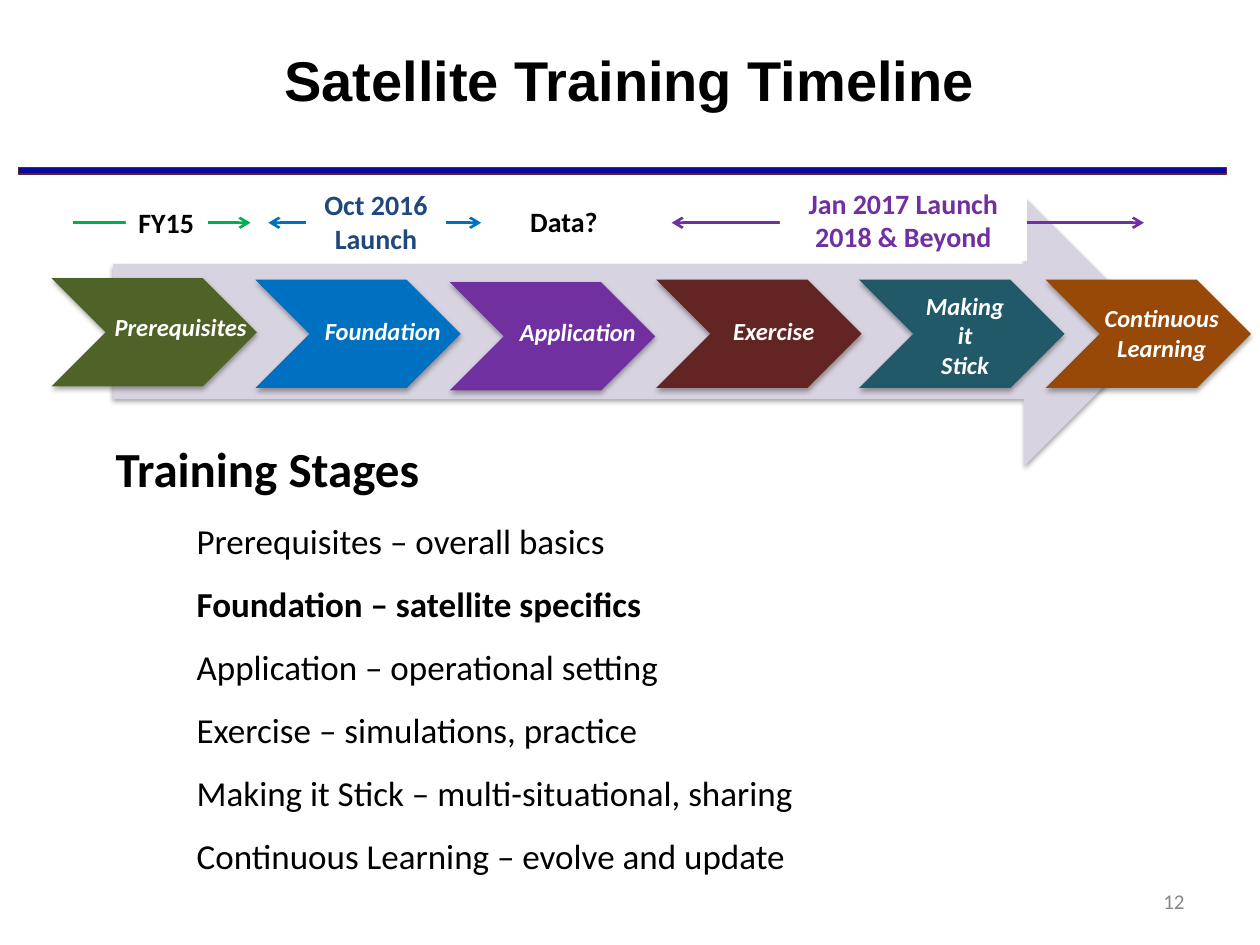
from lxml import etree
from pptx import Presentation
from pptx import util as u
from pptx.dml.color import RGBColor
from pptx.enum import shapes, text
from pptx.oxml import ns

BLACK = RGBColor(0x00, 0x00, 0x00)
WHITE = RGBColor(0xFF, 0xFF, 0xFF)
GREY = RGBColor(0x88, 0x88, 0x88)
NAVY = RGBColor(0x0A, 0x0A, 0x9E)
MAROON = RGBColor(0x63, 0x24, 0x23)
LAVENDER = RGBColor(0xD8, 0xD3, 0xE0)
OLIVE = RGBColor(0x4F, 0x62, 0x28)
BLUE = RGBColor(0x00, 0x70, 0xC0)
PURPLE = RGBColor(0x70, 0x30, 0xA0)
BRICK = RGBColor(0x63, 0x25, 0x23)
TEAL = RGBColor(0x21, 0x59, 0x68)
ORANGE = RGBColor(0x98, 0x48, 0x07)
GREEN = RGBColor(0x00, 0xB0, 0x50)
INK_BLUE = RGBColor(0x1F, 0x49, 0x7D)

LEFT, CENTER, RIGHT = text.PP_ALIGN.LEFT, text.PP_ALIGN.CENTER, text.PP_ALIGN.RIGHT
CHEVRON_SIZE = (4.14, 2.18)

STAGES = [
    ("Prerequisites", OLIVE, (0, 1.98), (1.02, 0.56, 3.25, 0.86), LEFT, True),
    ("Foundation", BLUE, (4.11, 2.01), (1.15, 0.61, 3.25, 0.86), LEFT, True),
    ("Application", PURPLE, (8.03, 2.06), (1.16, 0.58, 2.9, 0.86), LEFT, False),
    ("Exercise", BRICK, (12.19, 2.01), (1.3, 0.61, 2.41, 0.86), LEFT, True),
    ("Making it\nStick", TEAL, (16.28, 2.01), (0.94, 0.1, 2.39, 2.06), CENTER, True),
    ("Continuous Learning", ORANGE, (20.04, 2.01), (0.84, 0.35, 3, 1.45), CENTER, True),
]

PERIODS = [
    ("FY15", BLACK, GREEN, (0.43, 4.01), ["tailEnd"], (1.5, 0.38, 1.65, 0.94), LEFT, False),
    ("Oct 2016\nLaunch", INK_BLUE, BLUE, (4.37, 8.66), ["headEnd", "tailEnd"],
     (5.13, 0.03, 2.82, 1.63), CENTER, True),
    ("Jan 2017 Launch 2018 & Beyond", PURPLE, PURPLE, (12.5, 22.02), ["headEnd", "tailEnd"],
     (14.68, 0, 4.98, 1.63), CENTER, True),
]

STAGE_NOTES = [
    "Prerequisites – overall basics",
    "Foundation – satellite specifics",
    "Application – operational setting",
    "Exercise – simulations, practice",
    "Making it Stick – multi-situational, sharing",
    "Continuous Learning – evolve and update",
]
CURRENT_STAGE = STAGE_NOTES[1]


def in_cm(*lengths):
    return [u.Cm(length) for length in lengths]


def style(paragraph, size, color, bold=False, italic=False, align=LEFT, face="Calibri"):
    paragraph.alignment = align
    for run in paragraph.runs:
        font = run.font
        font.name, font.size = face, u.Pt(size)
        font.bold, font.italic = bold, italic
        font.color.rgb = color


def add_label(slide, box, words, size, color, wrap=True, fill=None, **look):
    label = slide.shapes.add_textbox(*in_cm(*box))
    if fill is not None:
        label.fill.solid()
        label.fill.fore_color.rgb = fill
    label.text_frame.word_wrap = wrap
    label.text_frame.text = words
    for paragraph in label.text_frame.paragraphs:
        style(paragraph, size, color, **look)
    return label


def add_block(slide, preset, box, fill, shaded=False):
    block = slide.shapes.add_shape(preset, *in_cm(*box))
    block.shadow.inherit = False
    block.fill.solid()
    block.fill.fore_color.rgb = fill
    block.line.fill.background()
    if shaded:
        effects = block.element.spPr.find(ns.qn("a:effectLst"))
        shade = etree.SubElement(effects, ns.qn("a:outerShdw"), blurRad=str(u.Pt(3.1)),
                                 dist=str(u.Pt(1.8)), dir="5400000", rotWithShape="0")
        tint = etree.SubElement(shade, ns.qn("a:srgbClr"), val="000000")
        etree.SubElement(tint, ns.qn("a:alpha"), val="35000")
    return block


def add_span(slide, start, end, y, color, heads):
    span = slide.shapes.add_connector(shapes.MSO_CONNECTOR.STRAIGHT, *in_cm(start, y, end, y))
    span.line.color.rgb = color
    span.line.width = u.Pt(1.5)
    outline = span.line._get_or_add_ln()
    for head in heads:
        etree.SubElement(outline, ns.qn(f"a:{head}"), type="arrow")
    etree.SubElement(span.element.spPr, ns.qn("a:effectLst"))


def place(placeholder, box):
    placeholder.left, placeholder.top, placeholder.width, placeholder.height = in_cm(*box)
    placeholder.text_frame.auto_size = text.MSO_AUTO_SIZE.NONE
    placeholder.text_frame.word_wrap = True


def heading(slide, left, top, width, height):
    title = slide.shapes.title
    place(title, (left + 1.52, top, width - 2.75, height))
    title.text_frame.vertical_anchor = text.MSO_ANCHOR.MIDDLE
    title.text_frame.margin_top = title.text_frame.margin_bottom = u.Cm(0.25)
    title.text_frame.text = "Satellite Training Timeline"
    style(title.text_frame.paragraphs[0], 32, BLACK, bold=True, align=CENTER, face="Arial")
    rule = add_block(slide, shapes.MSO_SHAPE.RECTANGLE,
                     (left, top + height + 0.2, width, 0.13), NAVY)
    rule.line.color.rgb = MAROON
    rule.line.width = u.Pt(0.75)


def timeline(slide, left, top):
    add_block(slide, shapes.MSO_SHAPE.RIGHT_ARROW,
              (left + 1.24, top + 0.33, 21.08, 5.44), LAVENDER, shaded=True)
    for words, fill, (x, y), (dx, dy, width, height), align, wrap in STAGES:
        x, y = left + x, top + y
        add_block(slide, shapes.MSO_SHAPE.CHEVRON, (x, y, *CHEVRON_SIZE), fill, shaded=True)
        add_label(slide, (x + dx, y + dy, width, height), words, 14, WHITE,
                  wrap=wrap, bold=True, italic=True, align=align)
    for words, color, stroke, (start, end), heads, (x, y, width, height), align, wrap in PERIODS:
        add_span(slide, left + start, left + end, top + 0.86, stroke, heads)
        add_label(slide, (left + x, top + y, width, height), words, 16, color,
                  wrap=wrap, fill=WHITE, bold=True, align=align)
    add_label(slide, (left + 9.4, top + 0.36, 2.24, 0.94), "Data?", 16, BLACK, bold=True)


def training_stages(slide, left, top):
    add_label(slide, (left, top, 7.47, 1.45), "Training Stages", 28, BLACK, bold=True)
    stage_list = slide.placeholders[1]
    place(stage_list, (left + 1.63, top + 1.63, 12.7, 7.52))
    frame = stage_list.text_frame
    frame.text = "\n".join(STAGE_NOTES)
    for index, paragraph in enumerate(frame.paragraphs):
        properties = paragraph._p.get_or_add_pPr()
        properties.set("marL", "0")
        properties.set("indent", "0")
        etree.SubElement(properties, ns.qn("a:buNone"))
        paragraph.space_before = u.Pt(12 if index else 0)
        style(paragraph, 20, BLACK, bold=paragraph.text == CURRENT_STAGE)


def page_number(slide, left, top, width, height):
    number = add_label(slide, (left, top, width, height), "12", 12, GREY, align=RIGHT)
    number.text_frame.vertical_anchor = text.MSO_ANCHOR.MIDDLE


def main():
    deck = Presentation()
    deck.slide_width, deck.slide_height = in_cm(25.4, 19.05)
    slide = deck.slides.add_slide(deck.slide_layouts[1])
    heading(slide, 0.38, 0, 24.34, 3.18)
    timeline(slide, 1.04, 3.63)
    training_stages(slide, 2.08, 8.71)
    page_number(slide, 18.21, 17.65, 5.92, 1.02)
    deck.save("out.pptx")


if __name__ == "__main__":
    main()
